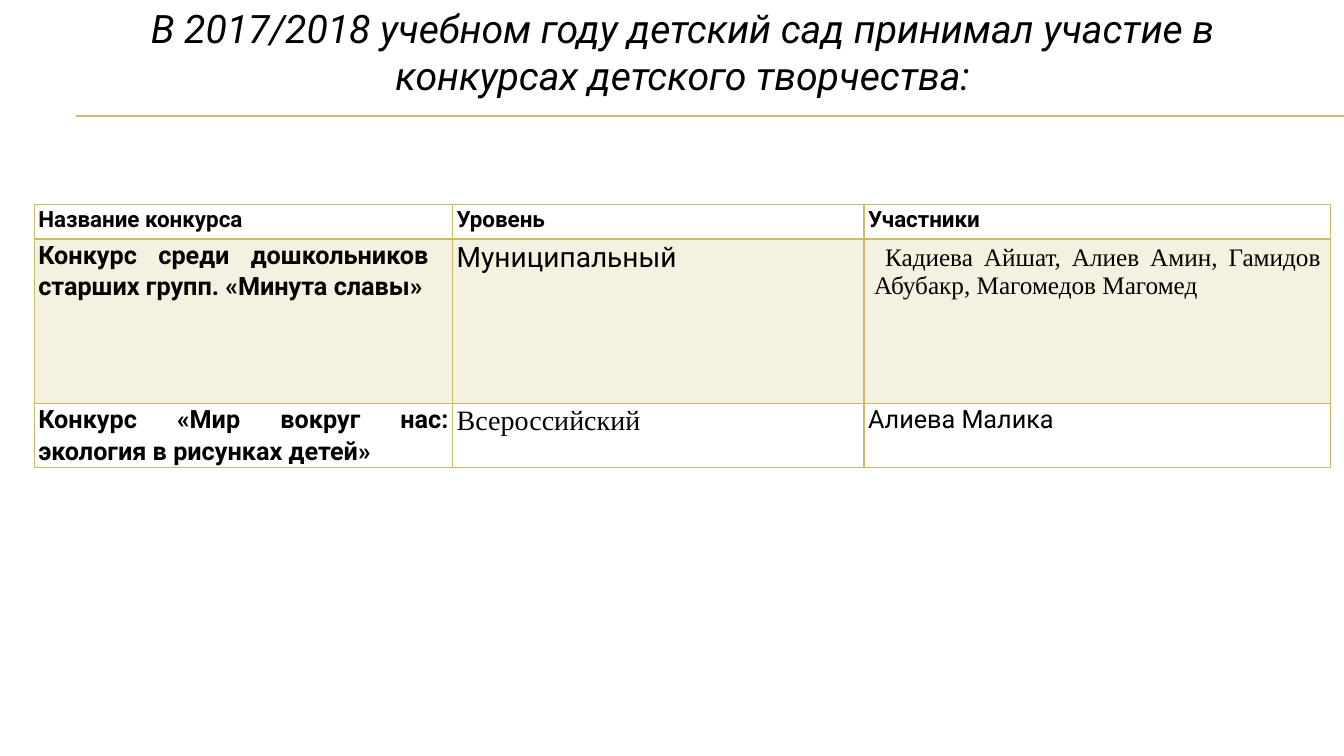
from pptx import Presentation
from pptx.dml.color import RGBColor
from pptx.enum.shapes import MSO_CONNECTOR as Link
from pptx.enum.text import MSO_ANCHOR as Anchor, PP_ALIGN as Align
from pptx.oxml import parse_xml
from pptx.oxml.ns import nsdecls
from pptx.oxml.xmlchemy import OxmlElement
from pptx.util import Inches, Pt

WIDE, HIGH = 13.33, 7.5
GOLD, PALE, WHITE, BLACK = "CEB966", "F5F1E0", "FFFFFF", "000000"
SANS, SERIF = "Roboto", "Times New Roman"
COLS = (4.15, 4.08, 4.63)
ROWS = (0.34, 1.63, 0.62)
FILLS = (WHITE, PALE, WHITE)
HEAD = dict(size=Pt(16), bold=True)
NAME = dict(size=Pt(18), bold=True)
LEVEL = dict(size=Pt(20))
BODY = dict(size=Pt(18))
CELLS = (
    (("Название конкурса", HEAD), ("Уровень", HEAD), ("Участники", HEAD)),
    (("Конкурс среди дошкольников старших групп. «Минута славы»", NAME),
     ("Муниципальный", LEVEL),
     (" Кадиева Айшат, Алиев Амин, Гамидов Абубакр, Магомедов Магомед",
      dict(BODY, name=SERIF))),
    (("Конкурс «Мир вокруг нас: экология в рисунках детей»", NAME),
     ("Всероссийский", dict(LEVEL, name=SERIF)),
     ("Алиева Малика", BODY)),
)
# Left and right insets that differ from the usual ones
INSETS = {(1, 0): (0.04, 0.24), (1, 2): (0.1, 0.1)}


def color(code):
    return RGBColor.from_string(code)


def write(frame, text, look, align):
    para = frame.paragraphs[0]
    para.alignment = align
    run = para.add_run()
    run.text = text
    for key, value in {"name": SANS, "bold": False, **look}.items():
        setattr(run.font, key, value)
    run.font.color.rgb = color(BLACK)
    return para


def add_title(slide, text):
    box = slide.shapes.add_textbox(Inches(0.72), 0, Inches(12.1), Inches(1.02))
    frame = box.text_frame
    frame.word_wrap = True
    frame.vertical_anchor = Anchor.MIDDLE
    frame.margin_top = frame.margin_bottom = 0
    write(frame, text, dict(size=Pt(28), italic=True), Align.CENTER)


def add_rule(slide, top):
    y = Inches(top)
    rule = slide.shapes.add_connector(
        Link.STRAIGHT, Inches(0.75), y, Inches(WIDE), y)
    rule.line.color.rgb = color(GOLD)
    rule.line.width = Pt(0.75)
    rule._element.spPr.append(OxmlElement("a:effectLst"))


def add_edges(cell, row):
    """Border the cell, with a thicker line under the header row."""
    props = cell._tc.get_or_add_tcPr()
    thick = {(0, "B"), (1, "T")}
    for spot, side in enumerate("LRTB"):
        width = Pt(2 if (row, side) in thick else 1)
        props.insert(spot, parse_xml(
            f'<a:ln{side} {nsdecls("a")} w="{width}"><a:solidFill>'
            f'<a:srgbClr val="{GOLD}"/></a:solidFill></a:ln{side}>'))


def fill_cell(cell, row, col):
    text, look = CELLS[row][col]
    left, right = INSETS.get((row, col), (0.04, 0.04))
    top = 0.05 if (row, col) == (1, 2) else 0
    cell.margin_left, cell.margin_right = Inches(left), Inches(right)
    cell.margin_top = cell.margin_bottom = Inches(top)
    cell.fill.solid()
    cell.fill.fore_color.rgb = color(FILLS[row])
    para = write(cell.text_frame, text, look, Align.JUSTIFY)
    if not top:
        para.line_spacing = 1.07
    if row:
        para.space_before = para.space_after = Pt(6)
    add_edges(cell, row)


def add_grid(slide):
    grid = slide.shapes.add_table(
        len(ROWS), len(COLS), Inches(0.34), Inches(2.03),
        Inches(sum(COLS)), Inches(sum(ROWS))).table
    grid.first_row = grid.horz_banding = False
    for col, width in zip(grid.columns, COLS):
        col.width = Inches(width)
    for row, height in zip(grid.rows, ROWS):
        row.height = Inches(height)
    for row in range(len(ROWS)):
        for col in range(len(COLS)):
            fill_cell(grid.cell(row, col), row, col)


def main():
    deck = Presentation()
    deck.slide_width, deck.slide_height = Inches(WIDE), Inches(HIGH)
    slide = deck.slides.add_slide(deck.slide_layouts[6])
    for top in (1.15, 1.16):
        add_rule(slide, top)
    add_title(slide, "В 2017/2018 учебном году детский сад принимал участие "
                     "в конкурсах детского творчества:")
    add_grid(slide)
    deck.save("out.pptx")


if __name__ == "__main__":
    main()
